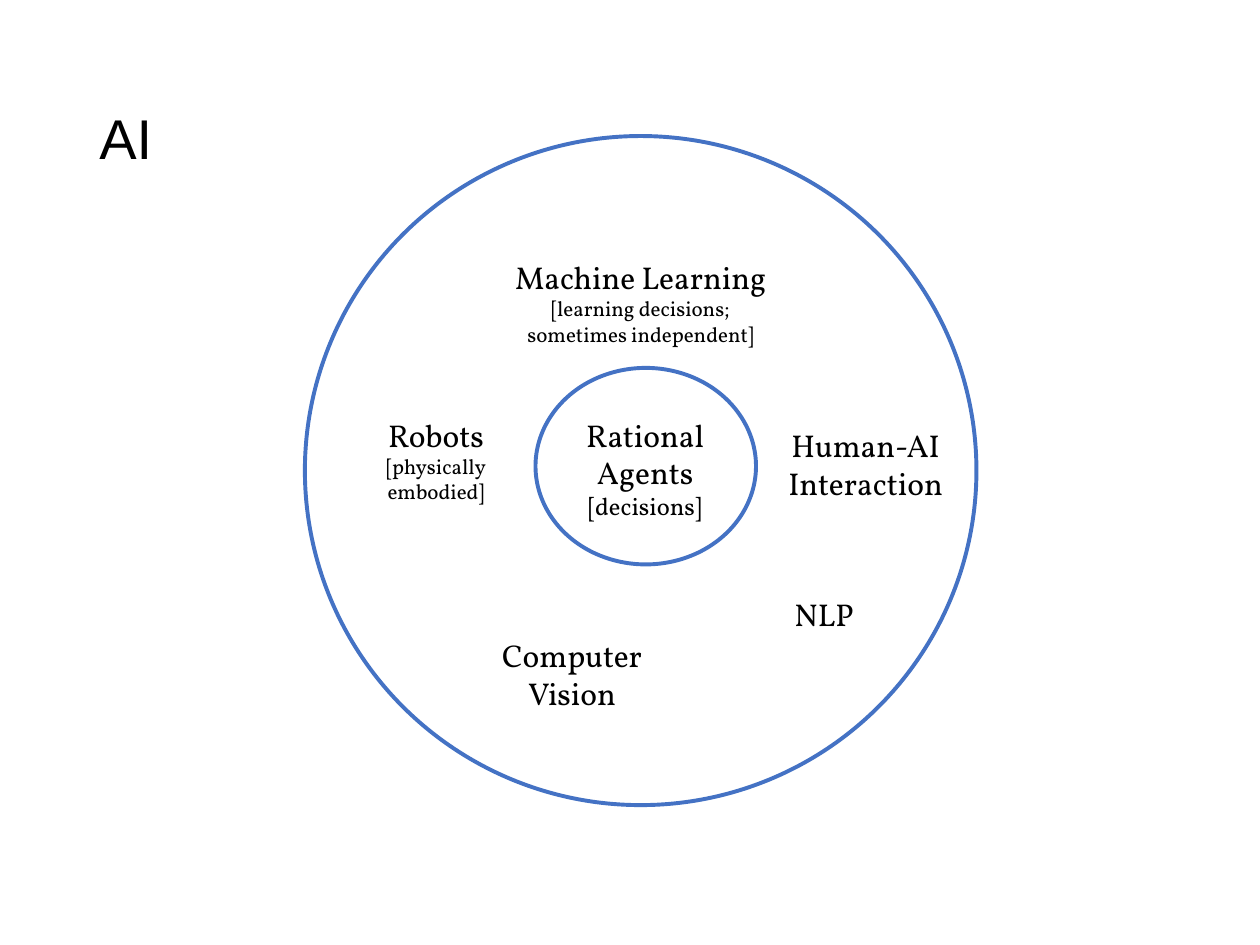
from pptx import Presentation
from pptx.dml.color import RGBColor
from pptx.enum.shapes import MSO_SHAPE
from pptx.enum.text import MSO_ANCHOR, PP_ALIGN
from pptx.util import Inches, Pt

BLUE = RGBColor(0x44, 0x72, 0xC4)
BLACK = RGBColor(0, 0, 0)

CIRCLES = [
    (2.42, 1.08, 5.33, 5.31),
    (4.25, 2.92, 1.75, 1.56),
]

# Box, then (text, size) for each paragraph
TOPICS = [
    ((4.33, 3.25, 1.58, 0.94),
     [("Rational", 18), ("Agents", 18), ("[decisions]", 14)]),
    ((2.67, 3.25, 1.58, 0.81),
     [("Robots", 18), ("[physically embodied]", 12)]),
    ((3.92, 2, 2.33, 0.81),
     [("Machine Learning", 18),
      ("[learning decisions; sometimes independent]", 12)]),
    ((5.75, 4.67, 1.58, 0.4), [("NLP", 18)]),
    ((3.75, 5, 1.58, 0.71), [("Computer Vision", 18)]),
    ((6.08, 3.33, 1.58, 0.71), [("Human-AI Interaction", 18)]),
]


def add_circle(s, box):
    sp = s.shapes.add_shape(MSO_SHAPE.OVAL, *map(Inches, box))
    sp.shadow.inherit = False
    sp.fill.background()
    sp.line.color.rgb = BLUE
    sp.line.width = Pt(2.25)


def add_text(s, box, lines, font="Vollkorn", align=PP_ALIGN.CENTER):
    """Add a wrapped text box with one paragraph per (text, size) pair."""
    tf = s.shapes.add_textbox(*map(Inches, box)).text_frame
    tf.word_wrap = True
    tf.text = "\n".join(text for text, _ in lines)
    for p, (_, size) in zip(tf.paragraphs, lines):
        p.alignment = align
        f = p.runs[0].font
        f.name, f.size = font, Pt(size)
        f.color.rgb = BLACK
    return tf


def add_title(s, text):
    tf = add_text(s, (0.69, 0.4, 8.62, 1.45), [(text, 32)],
                  "Arial", PP_ALIGN.LEFT)
    tf.vertical_anchor = MSO_ANCHOR.MIDDLE
    tf.paragraphs[0].line_spacing = 0.9


def main():
    prs = Presentation()
    prs.slide_width, prs.slide_height = Inches(10), Inches(7.5)
    s = prs.slides.add_slide(prs.slide_layouts[6])
    add_title(s, "AI")
    for box in CIRCLES:
        add_circle(s, box)
    for box, lines in TOPICS:
        add_text(s, box, lines)
    prs.save("out.pptx")


if __name__ == "__main__":
    main()
